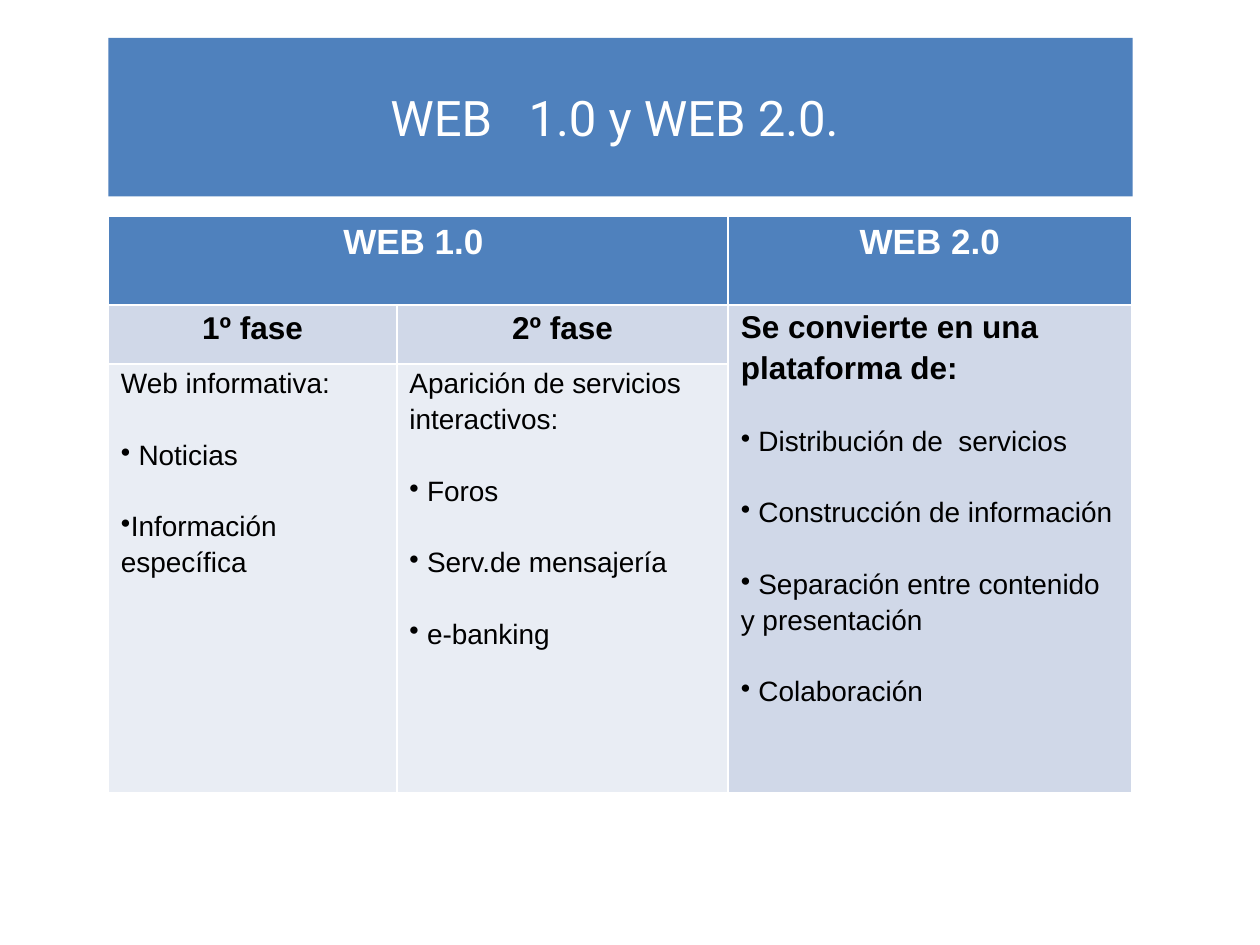
from dataclasses import dataclass

from lxml import etree
from pptx import Presentation
from pptx.dml.color import RGBColor
from pptx.enum.text import MSO_ANCHOR, PP_ALIGN
from pptx.oxml.ns import qn
from pptx.util import Inches, Pt

CENTER, LEFT = PP_ALIGN.CENTER, PP_ALIGN.LEFT
MIDDLE = MSO_ANCHOR.MIDDLE


@dataclass(frozen=True)
class Theme:
    blue: str = "4F81BD"
    band: str = "D0D8E8"
    pale: str = "E9EDF4"
    white: str = "FFFFFF"
    black: str = "000000"
    title_font: str = "Roboto"
    body_font: str = "Arial"
    title_size: float = 28
    head_size: float = 20
    phase_size: float = 18
    body_size: float = 16
    item_gap: float = 20.4
    line_spacing: float = 1.15
    border: float = 1


def write(para, text, *, font, size, color, bold=False, align=LEFT):
    para.alignment = align
    span = para.add_run()
    span.text = text
    span.font.name = font
    span.font.size = Pt(size)
    span.font.bold = bold
    span.font.color.rgb = RGBColor.from_string(color)


def add_bullet(para):
    properties = para._p.get_or_add_pPr()
    properties.set("marL", "0")
    properties.set("indent", "0")
    etree.SubElement(properties, qn("a:buChar"), char="•")


def add_borders(cell, color, width):
    properties = cell._tc.get_or_add_tcPr()
    for side in ("a:lnL", "a:lnR", "a:lnT", "a:lnB"):
        line = etree.SubElement(properties, qn(side), w=str(Pt(width)))
        fill = etree.SubElement(line, qn("a:solidFill"))
        etree.SubElement(fill, qn("a:srgbClr"), val=color)


class SlideBuilder:
    def __init__(self, page, theme):
        self.page = page
        self.theme = theme

    def title(self, text, left, top, width, height):
        theme = self.theme
        box = self.page.shapes.title
        box.left, box.top = Inches(left), Inches(top)
        box.width, box.height = Inches(width), Inches(height)
        box.fill.solid()
        box.fill.fore_color.rgb = RGBColor.from_string(theme.blue)
        box.text_frame.vertical_anchor = MIDDLE
        write(box.text_frame.paragraphs[0], text, font=theme.title_font,
              size=theme.title_size, color=theme.white, align=CENTER)

    def table(self, left, top, columns, rows, row_fills):
        """Add an empty bordered table whose rows have the given fills."""
        table = self.page.shapes.add_table(
            len(rows), len(columns), Inches(left), Inches(top),
            Inches(sum(columns)), Inches(sum(rows))).table
        for column, width in zip(table.columns, columns):
            column.width = Inches(width)
        for row, height, fill in zip(table.rows, rows, row_fills):
            row.height = Inches(height)
            for cell in row.cells:
                add_borders(cell, self.theme.white, self.theme.border)
                cell.fill.solid()
                cell.fill.fore_color.rgb = RGBColor.from_string(fill)
        return table

    def heading(self, cell, text, size, color):
        write(cell.text_frame.paragraphs[0], text, font=self.theme.body_font,
              size=size, color=color, bold=True, align=CENTER)

    def bullet_cell(self, cell, intro, items, intro_size, bold=False):
        """Fill a cell with an introduction and spaced bullet items."""
        theme = self.theme
        cell.margin_top = cell.margin_bottom = 0
        frame = cell.text_frame
        para = frame.paragraphs[0]
        para.line_spacing = theme.line_spacing
        write(para, intro, font=theme.body_font, size=intro_size,
              color=theme.black, bold=bold)
        for item in items:
            para = frame.add_paragraph()
            para.line_spacing = theme.line_spacing
            para.space_before = Pt(theme.item_gap)
            add_bullet(para)
            write(para, item, font=theme.body_font, size=theme.body_size,
                  color=theme.black)


def main():
    theme = Theme()
    deck = Presentation()
    deck.slide_width, deck.slide_height = Inches(10), Inches(7.5)
    page = deck.slides.add_slide(deck.slide_layouts[5])
    builder = SlideBuilder(page, theme)

    builder.title("WEB\t 1.0 y WEB 2.0. ", 0.86, 0.3, 8.13, 1.26)

    table = builder.table(0.86, 1.72, [2.29, 2.63, 3.2], [0.7, 0.47, 3.4],
                          [theme.blue, theme.band, theme.pale])
    web_1, web_2 = table.cell(0, 0), table.cell(0, 2)
    platform = table.cell(1, 2)
    web_1.merge(table.cell(0, 1))
    platform.merge(table.cell(2, 2))

    builder.heading(web_1, "WEB 1.0 ", theme.head_size, theme.white)
    builder.heading(web_2, "WEB 2.0", theme.head_size, theme.white)
    for column, phase in enumerate(["1º fase", "2º fase"]):
        builder.heading(table.cell(1, column), phase, theme.phase_size, theme.black)

    builder.bullet_cell(table.cell(2, 0), "Web informativa:",
                        [" Noticias", "Información específica"], theme.body_size)
    builder.bullet_cell(table.cell(2, 1), "Aparición de servicios interactivos:",
                        [" Foros", " Serv.de mensajería", " e-banking"],
                        theme.body_size)
    builder.bullet_cell(platform, "Se convierte en una plataforma de:",
                        [" Distribución de  servicios",
                         " Construcción de información",
                         " Separación entre contenido y presentación",
                         " Colaboración"],
                        theme.phase_size, bold=True)

    deck.save("out.pptx")


if __name__ == "__main__":
    main()
